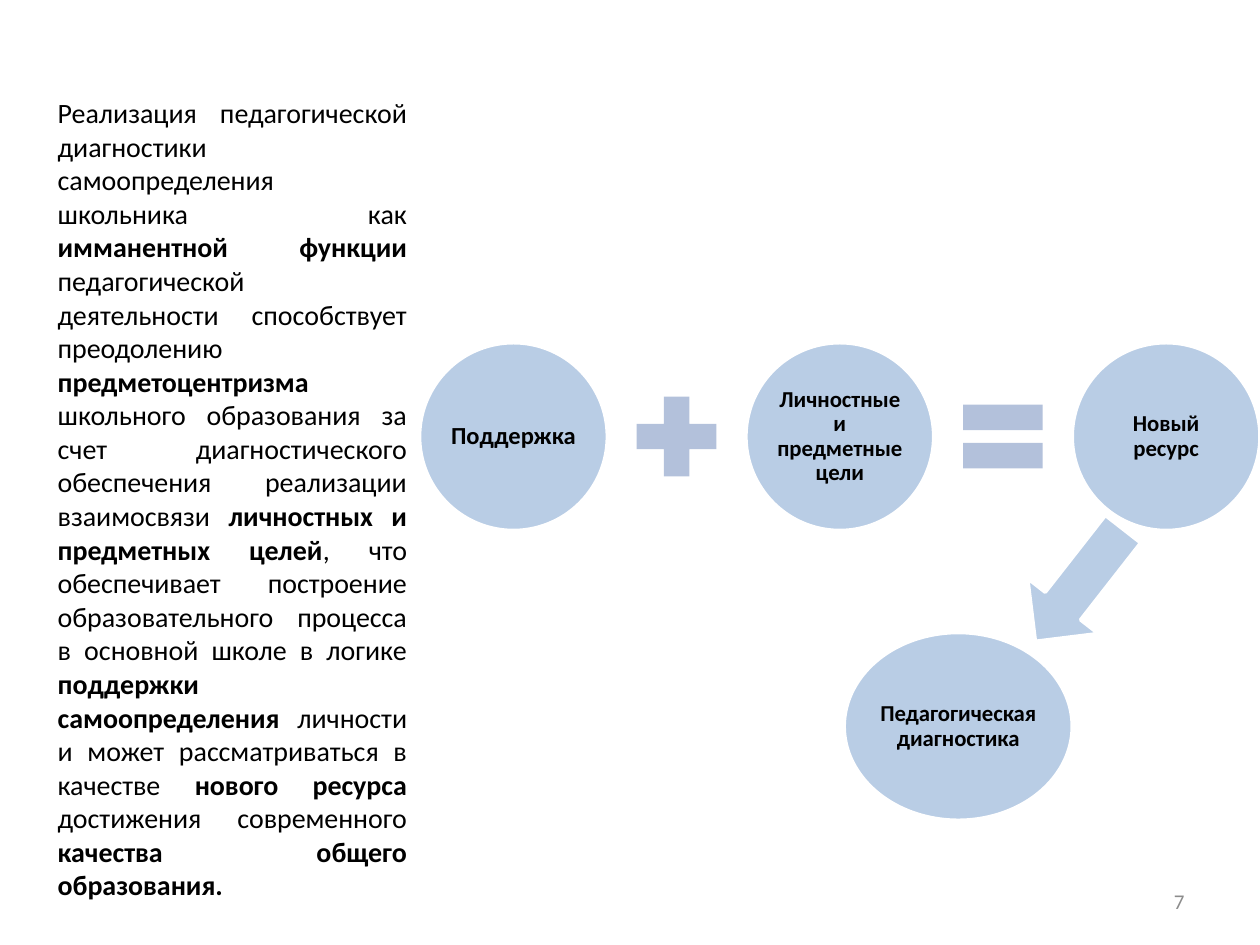
from pptx import Presentation
from pptx.dml.color import RGBColor
from pptx.enum.shapes import MSO_SHAPE
from pptx.enum.text import MSO_ANCHOR, MSO_AUTO_SIZE, PP_ALIGN
from pptx.util import Inches, Pt

LIGHT_BLUE = "B9CDE5"
OPERATOR_BLUE = "B3C1DB"
WHITE = "FFFFFF"

# Each run is (text, bold)
STATEMENT = [
    ("Реализация педагогической диагностики самоопределения школьника как ", False),
    ("имманентной функции ", True),
    ("педагогической деятельности способствует преодолению ", False),
    ("предметоцентризма", True),
    (" школьного образования за счет диагностического обеспечения реализации взаимосвязи ", False),
    ("личностных и предметных целей", True),
    (", что обеспечивает построение образовательного процесса "
     "в основной школе в логике ", False),
    ("поддержки самоопределения ", True),
    ("личности и может рассматриваться в качестве ", False),
    ("нового ресурса ", True),
    ("достижения современного ", False),
    ("качества общего образования.", True),
]


def color(hex_value):
    return RGBColor.from_string(hex_value)


def write_text(shape, runs, size, hex_color="000000", align=PP_ALIGN.CENTER,
               anchor=MSO_ANCHOR.MIDDLE, inset=None, line_spacing=None):
    """Fill a shape with one paragraph made of (text, bold) runs."""
    frame = shape.text_frame
    frame.word_wrap = True
    frame.vertical_anchor = anchor
    if inset is not None:
        frame.margin_left = frame.margin_right = Inches(inset)
        frame.margin_top = frame.margin_bottom = Inches(inset)
    paragraph = frame.paragraphs[0]
    paragraph.alignment = align
    if line_spacing:
        paragraph.line_spacing = line_spacing
    for text, bold in runs:
        run = paragraph.add_run()
        run.text = text
        run.font.name = "Calibri"
        run.font.size = Pt(size)
        run.font.bold = bold
        run.font.color.rgb = color(hex_color)


def add_text_box(slide, box, runs, size, **text_format):
    text_box = slide.shapes.add_textbox(*map(Inches, box))
    write_text(text_box, runs, size, **text_format)
    return text_box


def add_filled_shape(slide, preset, box, fill, outlined=True):
    shape = slide.shapes.add_shape(preset, *map(Inches, box))
    shape.shadow.inherit = False
    shape.fill.solid()
    shape.fill.fore_color.rgb = color(fill)
    if outlined:
        shape.line.color.rgb = color(WHITE)
        shape.line.width = Pt(2)
    else:
        shape.line.fill.background()
    return shape


def add_labelled_ellipse(slide, box, label, size=13):
    ellipse = add_filled_shape(slide, MSO_SHAPE.OVAL, box, LIGHT_BLUE)
    write_text(ellipse, [(label, True)], size, inset=0.01, line_spacing=0.9)


def add_equation(slide, box):
    """Three equal circles across the box, with an operator centred in each gap."""
    left, top, width, diameter = box
    operator_size = 0.86
    step = (width - diameter) / 2
    terms = [("Поддержка", 14), ("Личностные и предметные цели", 13), ("Новый ресурс", 13)]
    for index, (label, size) in enumerate(terms):
        add_labelled_ellipse(slide, (left + index * step, top, diameter, diameter), label, size)

    operator_left = left + (diameter + step - operator_size) / 2
    operator_top = top + (diameter - operator_size) / 2
    for index, preset in enumerate((MSO_SHAPE.MATH_PLUS, MSO_SHAPE.MATH_EQUAL)):
        operator_box = (operator_left + index * step, operator_top, operator_size, operator_size)
        add_filled_shape(slide, preset, operator_box, OPERATOR_BLUE, outlined=False)


def add_outcome(slide, box):
    """Ellipse in the box, with an arrow pointing down to its upper right."""
    left, top, _, _ = box
    add_labelled_ellipse(slide, box, "Педагогическая диагностика")
    arrow_box = (left + 1.51, top - 0.94, 0.71, 1.13)
    arrow = add_filled_shape(slide, MSO_SHAPE.DOWN_ARROW, arrow_box, LIGHT_BLUE)
    arrow.rotation = 38


def main():
    presentation = Presentation()
    presentation.slide_width = Inches(10)
    presentation.slide_height = Inches(7.5)
    slide = presentation.slides.add_slide(presentation.slide_layouts[6])

    add_text_box(slide, (7.17, 6.95, 2.33, 0.4), [("7", False)], 12,
                 hex_color="8C8C8C", align=PP_ALIGN.RIGHT)
    statement = add_text_box(slide, (0.36, 0.71, 2.97, 6.87), STATEMENT, 16,
                             align=PP_ALIGN.JUSTIFY, anchor=MSO_ANCHOR.TOP)
    statement.text_frame.auto_size = MSO_AUTO_SIZE.SHAPE_TO_FIT_TEXT
    add_equation(slide, (3.33, 2.72, 6.67, 1.49))
    add_outcome(slide, (6.7, 5.02, 1.81, 1.49))

    presentation.save("out.pptx")


if __name__ == "__main__":
    main()
